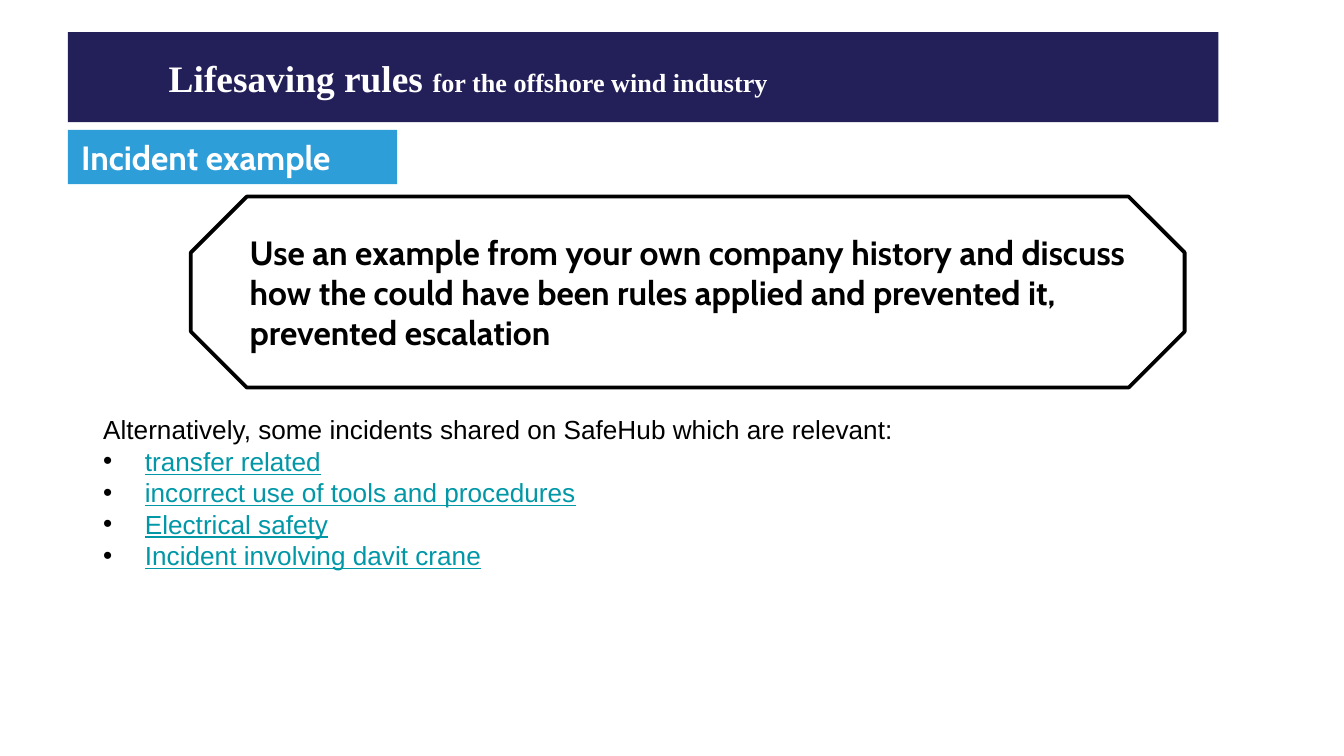
from dataclasses import dataclass

from lxml.etree import SubElement
from pptx import Presentation
from pptx.dml.color import RGBColor
from pptx.enum.shapes import MSO_SHAPE
from pptx.enum.text import MSO_ANCHOR, MSO_AUTO_SIZE, PP_ALIGN
from pptx.oxml.ns import qn
from pptx.util import Inches, Pt


@dataclass(frozen=True)
class Theme:
    """Colours, fonts and type sizes of the deck."""

    navy: str = "231F58"
    blue: str = "2E9ED9"
    teal: str = "0097A7"
    white: str = "FFFFFF"
    black: str = "000000"
    title_font: str = "Times New Roman"
    accent_font: str = "Cabin"
    body_font: str = "Arial"
    title_size: int = 20
    accent_size: int = 18
    body_size: int = 14


THEME = Theme()
WIDTH = Inches(10)
HEIGHT = WIDTH * 9 // 16
GRID = WIDTH // 100
LEFT = 5.06
INDENT = Inches(0.31)
INCIDENTS = [
    "transfer related",
    "incorrect use of tools and procedures",
    "Electrical safety",
    "Incident involving davit crane",
]


def area(place):
    """Turn columns and rows of the square grid into lengths."""
    return [round(cells * GRID) for cells in place]


def add_span(para, text, font, size, color, bold=False, underline=False):
    """Add a formatted run to a paragraph."""
    span = para.add_run()
    span.text = text
    span.font.name = font
    span.font.size = Pt(size)
    span.font.color.rgb = RGBColor.from_string(color)
    span.font.bold = bold
    span.font.underline = underline


def add_panel(page, kind, place, fill, insets=(0.1, 0.1), outline=None):
    """Add a filled shape and return its first paragraph."""
    panel = page.shapes.add_shape(kind, *area(place))
    panel.shadow.inherit = False
    panel.fill.solid()
    panel.fill.fore_color.rgb = RGBColor.from_string(fill)
    if outline:
        panel.line.color.rgb = RGBColor.from_string(outline)
        panel.line.width = Pt(2)
    else:
        panel.line.fill.background()
    frame = panel.text_frame
    frame.word_wrap = True
    frame.vertical_anchor = MSO_ANCHOR.MIDDLE
    frame.margin_left, frame.margin_right = map(Inches, insets)
    para = frame.paragraphs[0]
    para.alignment = PP_ALIGN.LEFT
    return para


def add_bullet(para):
    """Give a paragraph a black bullet with a hanging indent."""
    properties = para._p.get_or_add_pPr()
    properties.set("marL", str(INDENT))
    properties.set("indent", str(-INDENT))
    color = SubElement(properties, qn("a:buClr"))
    SubElement(color, qn("a:srgbClr"), val=THEME.black)
    SubElement(properties, qn("a:buFont"), typeface=THEME.body_font)
    SubElement(properties, qn("a:buChar"), char="•")


def add_incident_list(page, place, intro, incidents):
    """Add an introduction followed by bulleted incidents."""
    frame = page.shapes.add_textbox(*area(place)).text_frame
    frame.word_wrap = True
    frame.auto_size = MSO_AUTO_SIZE.SHAPE_TO_FIT_TEXT
    add_span(frame.paragraphs[0], intro, THEME.body_font, THEME.body_size, THEME.black)
    for incident in incidents:
        para = frame.add_paragraph()
        add_bullet(para)
        add_span(para, incident, THEME.body_font, THEME.body_size, THEME.teal, underline=True)


def main():
    """Build and save the slide."""
    deck = Presentation()
    deck.slide_width, deck.slide_height = WIDTH, HEIGHT
    page = deck.slides.add_slide(deck.slide_layouts[6])

    title = add_panel(page, MSO_SHAPE.RECTANGLE, (LEFT, 2.4, 85.6, 6.7), THEME.navy, (0.75, 0.1))
    add_span(title, "Lifesaving rules ", THEME.title_font, THEME.title_size, THEME.white, bold=True)
    add_span(title, "for the offshore wind industry", THEME.title_font, THEME.body_size, THEME.white, bold=True)

    add_incident_list(
        page,
        (6.7, 30.3, 69, 12.8),
        "Alternatively, some incidents shared on SafeHub which are relevant:",
        INCIDENTS,
    )

    label = add_panel(page, MSO_SHAPE.RECTANGLE, (LEFT, 9.66, 24.5, 4.04), THEME.blue)
    add_span(label, "Incident example", THEME.accent_font, THEME.accent_size, THEME.white, bold=True)

    prompt = add_panel(page, MSO_SHAPE.OCTAGON, (14.2, 14.63, 73.94, 14.2), THEME.white, (0.23, 0), THEME.black)
    add_span(
        prompt,
        "Use an example from your own company history and discuss how the could have been "
        "rules applied and prevented it, prevented escalation",
        THEME.accent_font,
        THEME.accent_size,
        THEME.black,
        bold=True,
    )

    deck.save("out.pptx")


if __name__ == "__main__":
    main()
